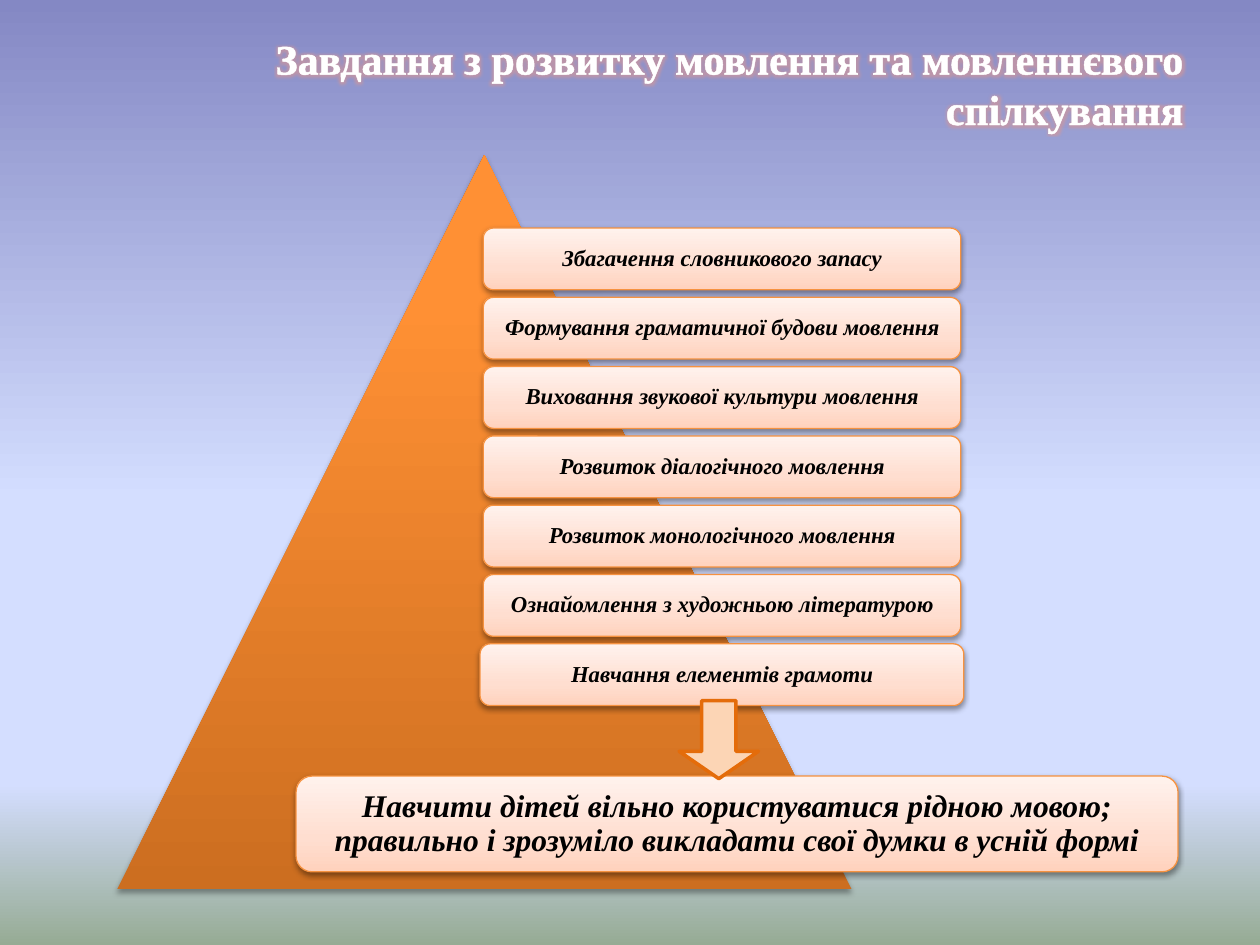
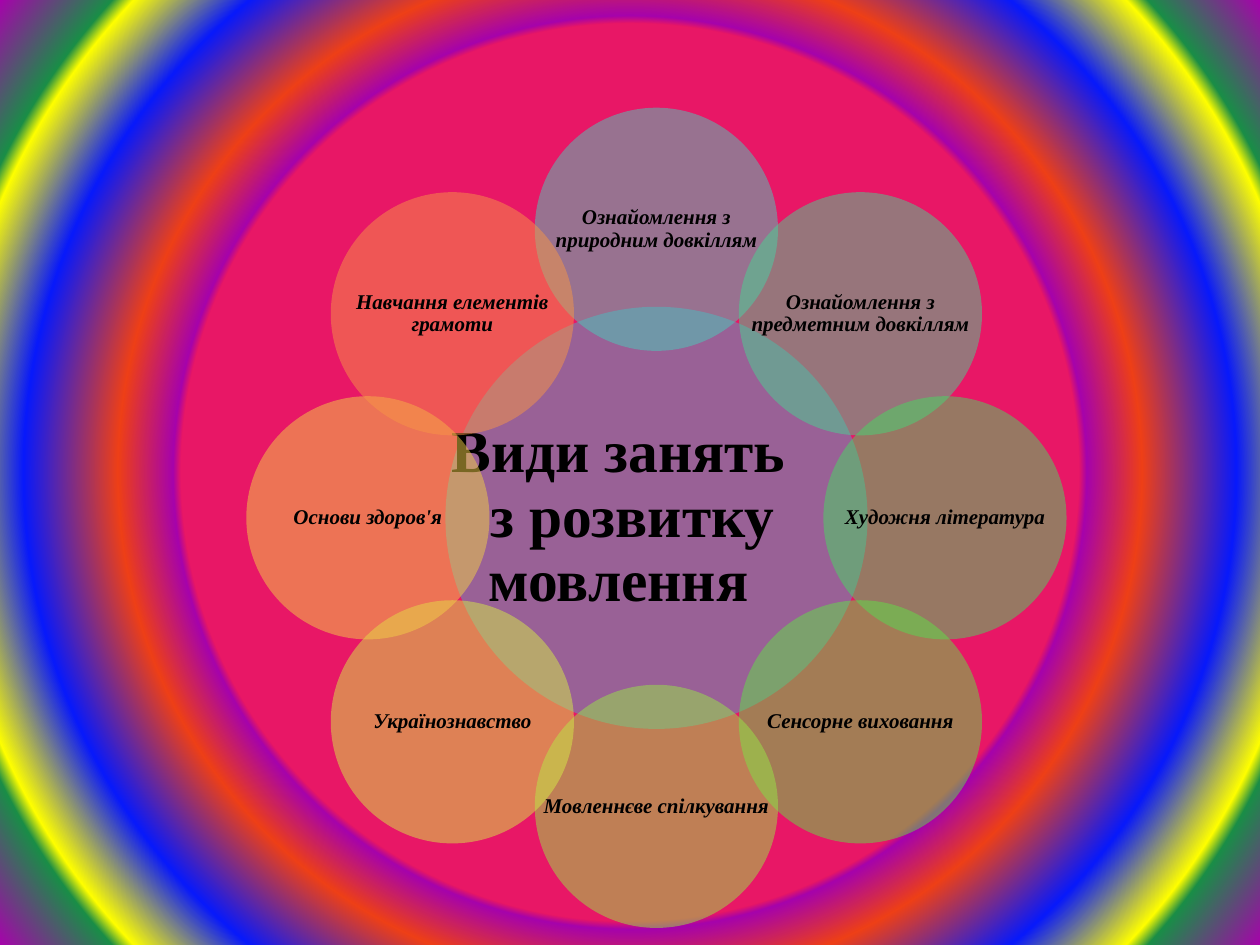
"""Build two slides on the tasks and the kinds of lessons in speech development."""
import dataclasses
import math

import lxml.etree
import pptx
import pptx.dml.color
import pptx.enum.shapes
import pptx.enum.text
import pptx.oxml
import pptx.oxml.ns
import pptx.util

Inches = pptx.util.Inches
Pt = pptx.util.Pt
Shape = pptx.enum.shapes.MSO_SHAPE
Align = pptx.enum.text.PP_ALIGN
Anchor = pptx.enum.text.MSO_ANCHOR


@dataclasses.dataclass(frozen=True)
class Theme:
    """Colours, gradients and type sizes of the slides."""
    font: str = "Times New Roman"
    text: str = "000000"
    title: str = "FFFFFF"
    glow: str = "D99694"
    card_line: str = "F69240"
    arrow_fill: str = "FCD5B5"
    arrow_line: str = "E46C0A"
    hub: str = "4BACC6"
    title_size: int = 24
    hub_size: int = 34
    goal_size: int = 18
    task_size: int = 13
    lesson_size: int = 12
    sky: tuple = ((0, "8488C4"), (53, "D4DEFF"), (83, "D4DEFF"), (100, "96AB94"))
    rainbow: tuple = ((57, "E81766"), (58, "A603AB"), (65, "EE3F17"), (77, "0819FB"),
                      (87, "FFFF00"), (89, "1A8D48"), (100, "A603AB"))
    pyramid: tuple = ((0, "CC6E20"), (80, "FF9034"), (100, "FF9136"))
    card: tuple = ((0, "FFD2BD"), (35, "FFDED0"), (100, "FFF2ED"))


THEME = Theme()
TASKS = (
    "Збагачення словникового запасу",
    "Формування граматичної будови мовлення",
    "Виховання звукової культури мовлення",
    "Розвиток діалогічного мовлення",
    "Розвиток монологічного мовлення",
    "Ознайомлення з художньою літературою",
    "Навчання елементів грамоти",
)
GOAL = ("Навчити дітей вільно користуватися рідною мовою; "
        "правильно і зрозуміло викладати свої думки в усній формі")
LESSONS = (
    ("Ознайомлення з природним довкіллям", "49CDBB"),
    ("Ознайомлення з предметним довкіллям", "48D491"),
    ("Художня література", "47DA61"),
    ("Сенсорне виховання", "60E146"),
    ("Мовленнєве спілкування", "98E746"),
    ("Українознавство", "D5EC46"),
    ("Основи здоров'я", "F2CF46"),
    ("Навчання елементів грамоти", "F79646"),
)
HUB_LINES = (("Види занять", {"marR": 0.6}), ("з розвитку", {"marL": 0.22}), ("мовлення", {}))


def rgb(value):
    """Return a colour for a hexadecimal value."""
    return pptx.dml.color.RGBColor.from_string(value)


def apply_format(target, values):
    """Set each attribute named in values on target."""
    for name, value in values.items():
        setattr(target, name, value)


def drawing(markup):
    """Parse markup whose root element is in the drawing namespace."""
    tag, rest = markup[1:].split(" ", 1)
    return pptx.oxml.parse_xml(f"<{tag} {pptx.oxml.ns.nsdecls('a')} {rest}")


def set_gradient(fill, properties, stops, angle=None):
    """Fill with a linear gradient, or with a circular one if no angle is given."""
    fill.solid()
    marks = "".join(f'<a:gs pos="{place * 1000}"><a:srgbClr val="{colour}"/></a:gs>'
                    for place, colour in stops)
    if angle is None:
        course = ('<a:path path="circle"><a:fillToRect l="50000" t="50000" '
                  'r="50000" b="50000"/></a:path>')
    else:
        course = f'<a:lin ang="{angle * 60000}" scaled="0"/>'
    gradient = drawing(f'<a:gradFill rotWithShape="1"><a:gsLst>{marks}</a:gsLst>{course}</a:gradFill>')
    properties.replace(properties.find(pptx.oxml.ns.qn("a:solidFill")), gradient)


def add_background(slide, stops, angle=None):
    """Give the slide a gradient background."""
    fill = slide.background.fill
    fill.solid()
    set_gradient(fill, slide.element.xpath("//p:bgPr")[0], stops, angle)


def add_shadow(shape, opacity, distance):
    """Drop a soft black shadow below the shape."""
    effects = shape.element.spPr.find(pptx.oxml.ns.qn("a:effectLst"))
    effects.append(drawing(
        f'<a:outerShdw blurRad="{Pt(3.1)}" dist="{Pt(distance)}" dir="5400000" rotWithShape="0">'
        f'<a:srgbClr val="000000"><a:alpha val="{opacity * 1000}"/></a:srgbClr></a:outerShdw>'))


def add_plain_shape(slide, kind, box, line=None, width=0.75):
    """Add a preset shape without shadow, and with no line unless a colour is given."""
    shape = slide.shapes.add_shape(kind, *map(Inches, box))
    shape.shadow.inherit = False
    if line:
        shape.line.color.rgb = rgb(line)
        shape.line.width = Pt(width)
    else:
        shape.line.fill.background()
    return shape


def write_text(shape, lines, size, inset, italic=True):
    """Write centred bold lines, each a text with its margins, in the shape."""
    frame = shape.text_frame
    margins = dict.fromkeys(("margin_left", "margin_top", "margin_right", "margin_bottom"),
                            Inches(inset))
    apply_format(frame, {"word_wrap": True, "vertical_anchor": Anchor.MIDDLE, **margins})
    for index, (text, indents) in enumerate(lines):
        paragraph = frame.add_paragraph() if index else frame.paragraphs[0]
        apply_format(paragraph, {"text": text, "alignment": Align.CENTER, "line_spacing": 0.9})
        properties = paragraph.runs[0].font
        apply_format(properties, {"name": THEME.font, "size": Pt(size), "bold": True, "italic": italic})
        properties.color.rgb = rgb(THEME.text)
        for name, indent in indents.items():
            paragraph._p.get_or_add_pPr().set(name, str(Inches(indent)))


def add_card(slide, box, text, size, inset=0.05):
    """Add a rounded card with text."""
    card = add_plain_shape(slide, Shape.ROUNDED_RECTANGLE, box, THEME.card_line)
    set_gradient(card.fill, card.element.spPr, THEME.card, 270)
    add_shadow(card, 38, 1.6)
    write_text(card, [(text, {})], size, inset)


def add_disc(slide, centre, diameter, colour, lines, size, inset, italic=True):
    """Add a half transparent disc with its text over the full width."""
    box = [middle - diameter / 2 for middle in centre] + [diameter, diameter]
    disc = add_plain_shape(slide, Shape.OVAL, box)
    disc.fill.solid()
    disc.fill.fore_color.rgb = rgb(colour)
    shade = disc.element.spPr.xpath("./a:solidFill/a:srgbClr")[0]
    shade.append(drawing('<a:alpha val="50000"/>'))
    label = slide.shapes.add_textbox(*map(Inches, box))
    write_text(label, lines, size, inset, italic)


def add_title(slide, text):
    """Add the white glowing title, aligned right."""
    title = slide.shapes.add_textbox(*map(Inches, (0.43, 0.21, 9.06, 1.47)))
    title.text_frame.word_wrap = True
    paragraph = title.text_frame.paragraphs[0]
    apply_format(paragraph, {"text": text, "alignment": Align.RIGHT})
    run = paragraph.runs[0]
    apply_format(run.font, {"name": THEME.font, "size": Pt(THEME.title_size), "bold": True})
    run.font.color.rgb = rgb(THEME.title)
    properties = run._r.get_or_add_rPr()
    properties.insert(0, drawing(
        f'<a:ln w="{Pt(1.45)}"><a:solidFill><a:srgbClr val="{THEME.title}"/></a:solidFill></a:ln>'))
    properties.insert(2, drawing(
        f'<a:effectLst ><a:glow rad="{Pt(5)}"><a:srgbClr val="{THEME.glow}">'
        '<a:alpha val="60000"/></a:srgbClr></a:glow></a:effectLst>'))


def add_arrow(slide):
    """Add the arrow that leads from the tasks to the goal."""
    arrow = add_plain_shape(slide, Shape.DOWN_ARROW, (5.39, 5.56, 0.63, 0.62), THEME.arrow_line, 2)
    arrow.fill.solid()
    arrow.fill.fore_color.rgb = rgb(THEME.arrow_fill)
    arrow.adjustments[0] = 0.43
    arrow.adjustments[1] = 0.35


def build_tasks(slide):
    """Build the pyramid of tasks."""
    add_background(slide, THEME.sky, 90)
    pyramid = add_plain_shape(slide, Shape.ISOSCELES_TRIANGLE, (0.93, 1.23, 5.83, 5.83))
    set_gradient(pyramid.fill, pyramid.element.spPr, THEME.pyramid, 270)
    add_shadow(pyramid, 35, 1.8)
    for index, task in enumerate(TASKS):
        width = 3.84 if task == TASKS[-1] else 3.79
        box = (5.73 - width / 2, 1.81 + 0.55 * index, width, 0.49)
        add_card(slide, box, task, THEME.task_size)
    add_card(slide, (2.35, 6.16, 7, 0.76), GOAL, THEME.goal_size, 0.07)
    add_title(slide, "Завдання з розвитку мовлення та мовленнєвого спілкування")
    add_arrow(slide)


def build_lessons(slide):
    """Build the ring of lessons around the hub."""
    add_background(slide, THEME.rainbow)
    hub_x, hub_y, radius = 5.21, 4.11, 2.29
    add_disc(slide, (hub_x, hub_y), 3.35, THEME.hub, HUB_LINES, THEME.hub_size, 0.05, False)
    for index, (lesson, colour) in enumerate(LESSONS):
        angle = math.tau * index / len(LESSONS)
        centre = (hub_x + radius * math.sin(angle), hub_y - radius * math.cos(angle))
        add_disc(slide, centre, 1.93, colour, [(lesson, {})], THEME.lesson_size, 0.02)


def main():
    """Build and save the presentation."""
    presentation = pptx.Presentation()
    apply_format(presentation, {"slide_width": Inches(10), "slide_height": Inches(7.5)})
    for build in (build_tasks, build_lessons):
        build(presentation.slides.add_slide(presentation.slide_layouts[6]))
    presentation.save("out.pptx")


if __name__ == "__main__":
    main()
